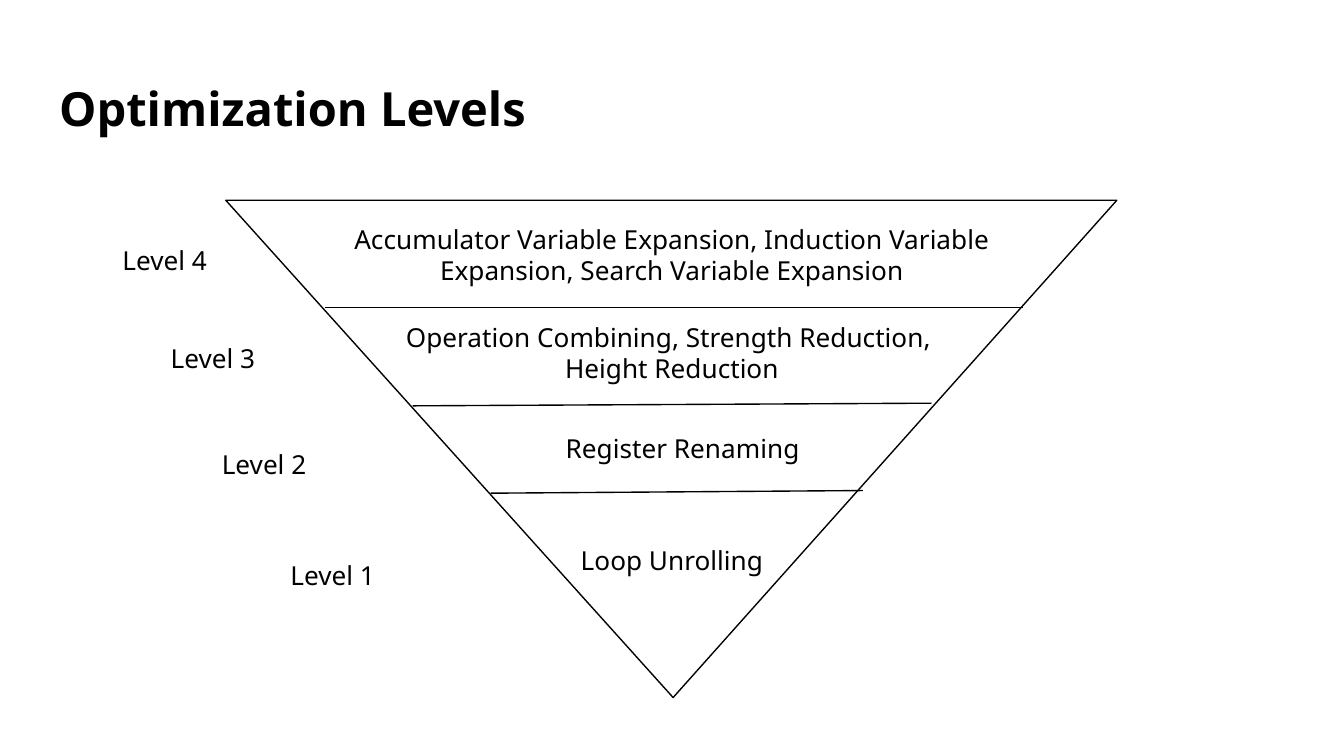
"""Build the Optimization Levels slide: an inverted pyramid of four labelled levels."""
from pptx import Presentation
from pptx.dml.color import RGBColor as RGB
from pptx.enum.shapes import MSO_CONNECTOR as CONN, MSO_SHAPE as SHAPE
from pptx.enum.text import MSO_ANCHOR as ANCHOR, PP_ALIGN as ALIGN
from pptx.oxml.ns import qn
from pptx.util import Inches as In, Pt

THEME = {"ink": RGB(0, 0, 0), "paper": RGB(255, 255, 255), "font": "Noto Sans",
         "title": Pt(25.2), "body": Pt(14), "line": Pt(0.75), "spacing": 1.0}
FRAME = {"word_wrap": True, "vertical_anchor": ANCHOR.TOP, "margin_left": In(0.1),
         "margin_right": In(0.1), "margin_top": In(0.1), "margin_bottom": In(0.1)}


def write(sp, lines, size, align, bold=False):
    """Fill a shape with formatted paragraphs."""
    tf = sp.text_frame
    for name, value in FRAME.items():
        setattr(tf, name, value)
    tf.text = "\n".join(lines)
    for p in tf.paragraphs:
        p.alignment, p.line_spacing = align, THEME["spacing"]
        r = p.runs[0]
        for name, value in {"name": THEME["font"], "size": size, "bold": bold}.items():
            setattr(r.font, name, value)
        r.font.color.rgb = THEME["ink"]


def outline(sp):
    """Give a shape or connector the thin outline."""
    sp.line.color.rgb, sp.line.width = THEME["ink"], THEME["line"]


prs = Presentation()
prs.slide_width, prs.slide_height = In(10), In(10) * 9 // 16
s = prs.slides.add_slide(prs.slide_layouts[5])
s.background.fill.solid()
s.background.fill.fore_color.rgb = THEME["paper"]

title = s.shapes.title
box = {"left": In(0.34), "top": In(0.49), "width": In(9.32), "height": In(0.63)}
for name, value in box.items():
    setattr(title, name, value)
write(title, ["Optimization Levels"], THEME["title"], ALIGN.LEFT, bold=True)

pyramid = s.shapes.add_shape(SHAPE.ISOSCELES_TRIANGLE, In(1.68), In(1.49), In(6.63), In(3.7))
pyramid.rotation = 180
pyramid.adjustments[0] = 0.498
pyramid.shadow.inherit = False
pyramid.fill.background()
outline(pyramid)

dividers = [(2.42, 2.29, 7.61, 2.29), (3.07, 3.02, 6.93, 3), (3.65, 3.67, 6.42, 3.65)]
for ends in dividers:
    cx = s.shapes.add_connector(CONN.STRAIGHT, *map(In, ends))
    outline(cx)
    cx._element.spPr.append(cx._element.spPr.makeelement(qn("a:effectLst"), {}))

levels = [
    ("Level 4", 0.12, 1.72, 2.47, 1.56,
     ["Accumulator Variable Expansion, Induction Variable Expansion, Search Variable Expansion"]),
    ("Level 3", 0.48, 2.45, 2.47, 2.29,
     ["Operation Combining, Strength Reduction, ", "Height Reduction"]),
    ("Level 2", 0.86, 3.24, 2.55, 3.12, ["Register Renaming"]),
    ("Level 1", 1.37, 4.06, 2.47, 3.95, ["Loop Unrolling"]),
]
for label, label_x, label_y, x, y, lines in levels:
    height = 0.67 if len("".join(lines)) > 20 else 0.44
    for text, left, top, w, h in [([label], label_x, label_y, 2.21, 0.44),
                                  (lines, x, y, 5.06, height)]:
        sp = s.shapes.add_textbox(In(left), In(top), In(w), In(h))
        write(sp, text, THEME["body"], ALIGN.CENTER)

prs.save("out.pptx")
